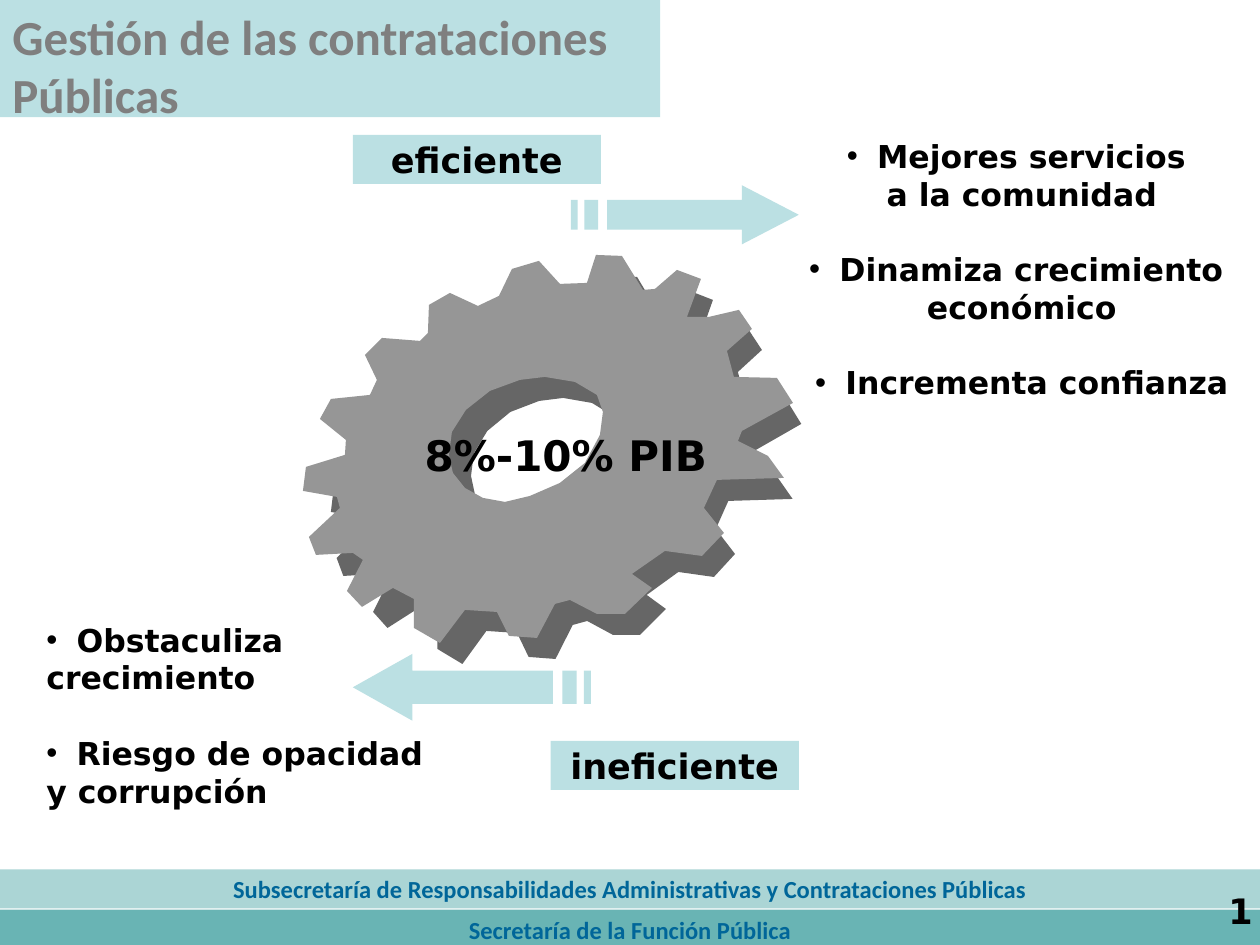
from dataclasses import dataclass
from typing import Optional

from lxml.etree import SubElement
from pptx import Presentation
from pptx.dml.color import RGBColor
from pptx.enum.shapes import MSO_SHAPE
from pptx.enum.text import MSO_ANCHOR, PP_ALIGN
from pptx.oxml.ns import qn
from pptx.util import Inches, Pt

COLORS = {
    "aqua": "BBE0E3", "teal": "008080", "navy": "006699", "title": "7F7F7F",
    "black": "000000", "white": "FFFFFF", "gear": "969696", "flank": "666666",
}
HEADING_FONT, BODY_FONT, BULLET_FONT = "Calibri", "DejaVu Sans", "Arial"
BULLET_INDENT = Inches(0.24)
GROUP_GAP = 21.5

# Gear geometry is given clockwise on a grid of 126 units to the inch.
GRID = 126
GEAR_RIM = [
    (560, 284), (587, 283), (596, 255), (622, 256), (643, 290), (655, 289),
    (677, 270), (701, 279), (687, 317), (709, 317), (739, 310), (752, 329),
    (727, 351), (734, 377), (777, 378), (793, 403), (742, 431), (738, 441),
    (768, 456), (784, 478), (717, 480), (704, 508), (724, 533), (702, 556),
    (665, 551), (632, 574), (652, 588), (625, 614), (597, 614), (570, 600),
    (555, 604), (537, 638), (509, 636), (497, 612), (465, 610), (440, 643),
    (414, 628), (414, 599), (393, 588), (362, 607), (347, 591), (363, 560),
    (353, 553), (316, 555), (309, 537), (340, 508), (337, 497), (303, 491),
    (306, 467), (345, 455), (346, 440), (320, 419), (331, 399), (370, 395),
    (377, 380), (365, 355), (382, 338), (420, 341), (428, 333), (429, 305),
    (450, 293), (478, 306), (499, 296), (512, 269), (539, 261),
]
GEAR_BORE = [
    (453, 473), (449, 455), (452, 432), (466, 410), (490, 391), (520, 380),
    (545, 377), (575, 382), (597, 395), (603, 412), (600, 435), (585, 463),
    (560, 483), (530, 496), (505, 502), (483, 498), (465, 488),
]


@dataclass
class Line:
    text: str
    bullet: bool = False
    gap: float = 0


@dataclass
class Style:
    size: float
    font: str = BODY_FONT
    color: str = "black"
    align: Optional[PP_ALIGN] = PP_ALIGN.CENTER
    anchor: MSO_ANCHOR = MSO_ANCHOR.MIDDLE
    wrap: bool = False


@dataclass
class Area:
    left: float
    top: float
    width: float
    height: float

    def lengths(self):
        return [Inches(value) for value in (self.left, self.top, self.width, self.height)]


def paint(shape, color: str) -> None:
    shape.shadow.inherit = False
    shape.fill.solid()
    shape.fill.fore_color.rgb = RGBColor.from_string(COLORS[color])
    shape.line.fill.background()


def write(shape, lines: list[Line], style: Style) -> None:
    frame = shape.text_frame
    frame.word_wrap = style.wrap
    frame.vertical_anchor = style.anchor
    for index, line in enumerate(lines):
        paragraph = frame.add_paragraph() if index else frame.paragraphs[0]
        paragraph.alignment = style.align
        if line.gap:
            paragraph.space_before = Pt(line.gap)
        if line.bullet:
            properties = paragraph._p.get_or_add_pPr()
            properties.set("marL", str(BULLET_INDENT))
            properties.set("indent", str(-BULLET_INDENT))
            SubElement(properties, qn("a:buFont")).set("typeface", BULLET_FONT)
            SubElement(properties, qn("a:buChar")).set("char", "•")
        span = paragraph.add_run()
        span.text = line.text
        span.font.name = style.font
        span.font.size = Pt(style.size)
        span.font.bold = True
        span.font.color.rgb = RGBColor.from_string(COLORS[style.color])


def add_text(page, area: Area, lines: list[Line], style: Style) -> None:
    write(page.shapes.add_textbox(*area.lengths()), lines, style)


def add_band(page, area: Area, color: str, opacity: int = 100):
    band = page.shapes.add_shape(MSO_SHAPE.RECTANGLE, *area.lengths())
    paint(band, color)
    if opacity < 100:
        tint = band.fill._xPr.find(".//" + qn("a:srgbClr"))
        SubElement(tint, qn("a:alpha")).set("val", str(opacity * 1000))
    return band


def add_outline(page, contours: list, color: str) -> None:
    """Draw closed contours, given in inches, as one filled shape."""
    contours = [[(Inches(x), Inches(y)) for x, y in contour] for contour in contours]
    builder = page.shapes.build_freeform(*contours[0][0], scale=1.0)
    for index, contour in enumerate(contours):
        if index:
            builder.move_to(*contour[0])
        builder.add_line_segments(contour[1:], close=True)
    paint(builder.convert_to_shape(), color)


def add_striped_arrow(page, area: Area, to_right: bool) -> None:
    def bar(start: float, end: float) -> list:
        return [(start, 0.25), (start, 0.75), (end, 0.75), (end, 0.25)]

    arrow = [(0.75, 0), (0.75, 0.25), (0.16, 0.25), (0.16, 0.75),
             (0.75, 0.75), (0.75, 1), (1, 0.5)]
    contours = [
        [(area.left + area.width * (x if to_right else 1 - x), area.top + area.height * y)
         for x, y in contour]
        for contour in (arrow, bar(0.06, 0.12), bar(0, 0.03))
    ]
    add_outline(page, contours, "aqua")


def add_gear(page) -> None:
    """Draw the far side, narrowed by perspective, and the face over it."""
    for color, scale, shift_x, shift_y in (("flank", 0.96, 40, 21), ("gear", 1, 0, 0)):
        contours = [
            [((x * scale + shift_x) / GRID, (y + shift_y) / GRID) for x, y in contour]
            for contour in (GEAR_RIM, GEAR_BORE)
        ]
        add_outline(page, contours, color)


def main() -> None:
    deck = Presentation()
    deck.slide_width, deck.slide_height = Inches(10), Inches(7.5)
    page = deck.slides.add_slide(deck.slide_layouts[6])

    add_band(page, Area(0, 0, 5.24, 0.93), "aqua")
    add_band(page, Area(0, 6.61, 10, 0.91), "white")
    add_text(page, Area(0, 0, 5.31, 1.04),
             [Line("Gestión de las contrataciones"), Line("Públicas")],
             Style(28, HEADING_FONT, "title", PP_ALIGN.LEFT, MSO_ANCHOR.TOP, True))

    footer = Style(14, HEADING_FONT, "navy")
    for top, opacity, text in (
        (7.22, 59, "Secretaría de la Función Pública"),
        (6.9, 33, "Subsecretaría de Responsabilidades Administrativas y Contrataciones Públicas"),
    ):
        write(add_band(page, Area(0, top, 10, 0.31), "teal", opacity), [Line(text)], footer)

    add_text(page, Area(0.27, 4.22, 3.4, 2.91), [
        Line("Obstaculiza", True), Line("crecimiento"),
        Line("Riesgo de opacidad", True, GROUP_GAP), Line("y corrupción"),
    ], Style(18, align=PP_ALIGN.LEFT, wrap=True))
    add_text(page, Area(6.21, 0.68, 3.8, 2.91), [
        Line("Mejores servicios ", True), Line("a la comunidad"),
        Line("Dinamiza crecimiento ", True, GROUP_GAP), Line("económico"),
        Line("Incrementa confianza", True, GROUP_GAP),
    ], Style(18, wrap=True))

    add_gear(page)
    for left, top, text in ((4.37, 5.88, "ineficiente"), (2.8, 1.07, "eficiente")):
        write(add_band(page, Area(left, top, 1.97, 0.39), "aqua"), [Line(text)], Style(20))
    add_striped_arrow(page, Area(4.53, 1.47, 1.81, 0.47), to_right=True)
    add_striped_arrow(page, Area(2.8, 5.19, 1.89, 0.53), to_right=False)
    add_text(page, Area(3.19, 2.82, 2.6, 1.57), [Line("8%-10% PIB")], Style(24, wrap=True))
    add_text(page, Area(9.65, 7.01, 0.31, 0.44), [Line("1")],
             Style(20, align=PP_ALIGN.LEFT, anchor=MSO_ANCHOR.TOP, wrap=True))

    deck.save("out.pptx")


if __name__ == "__main__":
    main()
